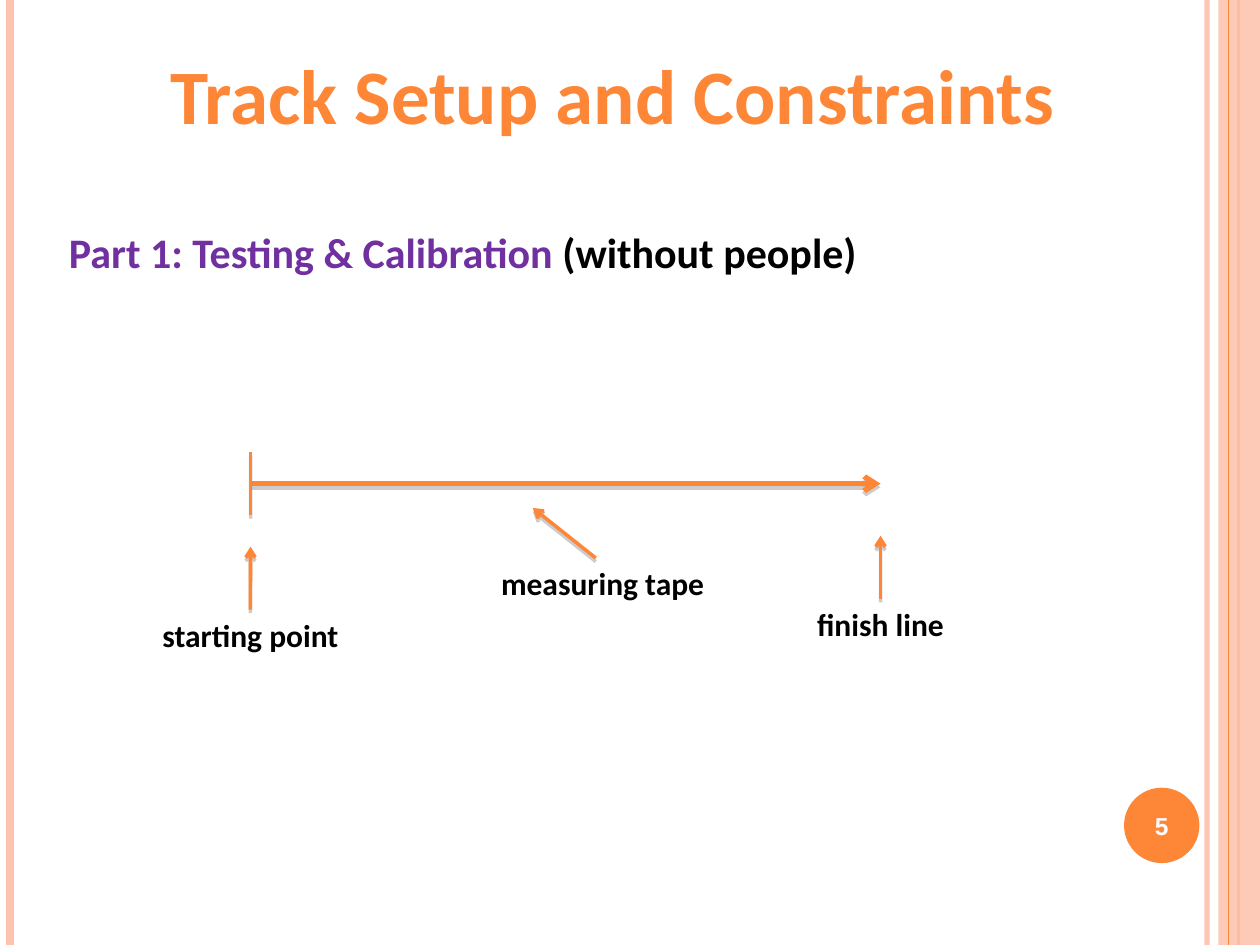
from dataclasses import dataclass

from lxml import etree
from pptx import Presentation
from pptx.dml.color import RGBColor
from pptx.enum.shapes import MSO_CONNECTOR, MSO_SHAPE
from pptx.enum.text import MSO_ANCHOR, MSO_AUTO_SIZE, PP_ALIGN
from pptx.oxml.ns import qn
from pptx.util import Cm, Pt

STRAIGHT = MSO_CONNECTOR.STRAIGHT
RECT, OVAL = MSO_SHAPE.RECTANGLE, MSO_SHAPE.OVAL
CENTER, LEFT = PP_ALIGN.CENTER, PP_ALIGN.LEFT
MIDDLE, BOTTOM = MSO_ANCHOR.MIDDLE, MSO_ANCHOR.BOTTOM
TOP_SIDE = 0


@dataclass(frozen=True)
class Theme:
    orange: str = "FE8637"
    peach: str = "FEC3AE"
    purple: str = "7030A0"
    black: str = "000000"
    white: str = "FFFFFF"
    shadow: str = "808080"
    font: str = "Calibri"
    number_font: str = "Arial"
    title: int = 44
    heading: int = 24
    label: int = 18
    number: int = 14


THEME = Theme()
WIDTH, HEIGHT = 25.4, 19.05
START_X, FINISH_X, TRACK_Y = 5.05, 17.75, 9.75
ARROW = 1.27


def add_run(p, text, size, color, font=THEME.font):
    r = p.add_run()
    r.text = text
    r.font.name, r.font.size, r.font.bold = font, Pt(size), True
    r.font.color.rgb = RGBColor.from_string(color)


def set_alpha(fill_parent, percent):
    color = fill_parent.find(qn("a:solidFill")).find(qn("a:srgbClr"))
    etree.SubElement(color, qn("a:alpha"), val=str(percent * 1000))


def add_line(shapes, start, end, color, width, alpha=None):
    line = shapes.add_connector(STRAIGHT, *(Cm(v) for v in start + end))
    line.line.color.rgb = RGBColor.from_string(color)
    line.line.width = Pt(width)
    if alpha:
        set_alpha(line.line._get_or_add_ln(), alpha)
    etree.SubElement(line._element.spPr, qn("a:effectLst"))
    return line


def add_track_line(shapes, start, end, width=2, arrow=True):
    """Orange line with a hard shadow just below it."""
    line = add_line(shapes, start, end, THEME.orange, width)
    if arrow:
        etree.SubElement(line.line._get_or_add_ln(), qn("a:tailEnd"), type="arrow")
    effects = line._element.spPr.find(qn("a:effectLst"))
    shadow = etree.SubElement(effects, qn("a:outerShdw"), blurRad="0",
                              dist=str(Pt(2)), dir="5400000", rotWithShape="0")
    color = etree.SubElement(shadow, qn("a:srgbClr"), val=THEME.shadow)
    etree.SubElement(color, qn("a:alpha"), val="40000")
    return line


def add_block(shapes, kind, left, top, width, height, color):
    sp = shapes.add_shape(kind, Cm(left), Cm(top), Cm(width), Cm(height))
    sp.shadow.inherit = False
    sp.fill.solid()
    sp.fill.fore_color.rgb = RGBColor.from_string(color)
    sp.line.fill.background()
    return sp


def add_text(shapes, left, top, width, height, runs, size, align, wrap=True):
    sp = shapes.add_textbox(Cm(left), Cm(top), Cm(width), Cm(height))
    tf = sp.text_frame
    tf.word_wrap = wrap
    tf.auto_size = MSO_AUTO_SIZE.SHAPE_TO_FIT_TEXT
    p = tf.paragraphs[0]
    p.alignment = align
    for text, color in runs:
        add_run(p, text, size, color)
    return sp


def add_label(shapes, text, center, top, width):
    return add_text(shapes, center - width / 2, top, width, 1.02,
                    [(text, THEME.black)], THEME.label, CENTER)


def add_borders(shapes):
    add_line(shapes, (24.33, 0), (24.33, HEIGHT), THEME.peach, 3, alpha=93)
    add_line(shapes, (0.2, 0), (0.2, HEIGHT), THEME.peach, 4.5)
    add_line(shapes, (24.97, 0), (24.97, HEIGHT), THEME.orange, 1.5)
    band = add_block(shapes, RECT, 24.56, 0, WIDTH - 24.56, HEIGHT, THEME.peach)
    set_alpha(band._element.spPr, 87)
    add_line(shapes, (24.77, 0), (24.77, HEIGHT), THEME.orange, 0.75)


def add_page_number(shapes, number):
    sp = add_block(shapes, OVAL, 22.66, 15.88, 1.52, 1.52, THEME.orange)
    tf = sp.text_frame
    tf.margin_left = tf.margin_right = tf.margin_top = tf.margin_bottom = 0
    tf.vertical_anchor = MIDDLE
    p = tf.paragraphs[0]
    p.alignment = CENTER
    add_run(p, number, THEME.number, THEME.white, THEME.number_font)


def set_title(title, text):
    title.left, title.top = Cm(0.43), Cm(0.76)
    title.width, title.height = Cm(23.85), Cm(2.18)
    tf = title.text_frame
    tf.word_wrap = True
    tf.auto_size = MSO_AUTO_SIZE.NONE
    tf.vertical_anchor = BOTTOM
    p = tf.paragraphs[0]
    p.alignment = CENTER
    add_run(p, text, THEME.title, THEME.orange)


def add_track(shapes):
    add_track_line(shapes, (START_X, TRACK_Y), (FINISH_X, TRACK_Y), width=3)
    add_track_line(shapes, (START_X, TRACK_Y - ARROW / 2),
                   (START_X, TRACK_Y + ARROW / 2), arrow=False)
    for text, x, top in (("starting point", START_X, 12.29),
                         ("finish line", FINISH_X, 12.07)):
        label = add_label(shapes, text, x, top, 4.45)
        pointer = add_track_line(shapes, (x, top), (x, top - ARROW))
        pointer.begin_connect(label, TOP_SIDE)
    add_track_line(shapes, (12.01, 11.25), (10.74, 10.24))
    add_label(shapes, "measuring tape", 12.15, 11.25, 5.5)


def main():
    prs = Presentation()
    prs.slide_width, prs.slide_height = Cm(WIDTH), Cm(HEIGHT)
    slide = prs.slides.add_slide(prs.slide_layouts[5])
    shapes = slide.shapes
    add_borders(shapes)
    add_page_number(shapes, "5")
    set_title(shapes.title, "Track Setup and Constraints")
    add_text(shapes, 1.14, 4.45, 16.56, 1.27,
             [("Part 1: Testing & Calibration ", THEME.purple),
              ("(without people)", THEME.black)],
             THEME.heading, LEFT, wrap=False)
    add_track(shapes.add_group_shape().shapes)
    prs.save("out.pptx")


if __name__ == "__main__":
    main()
